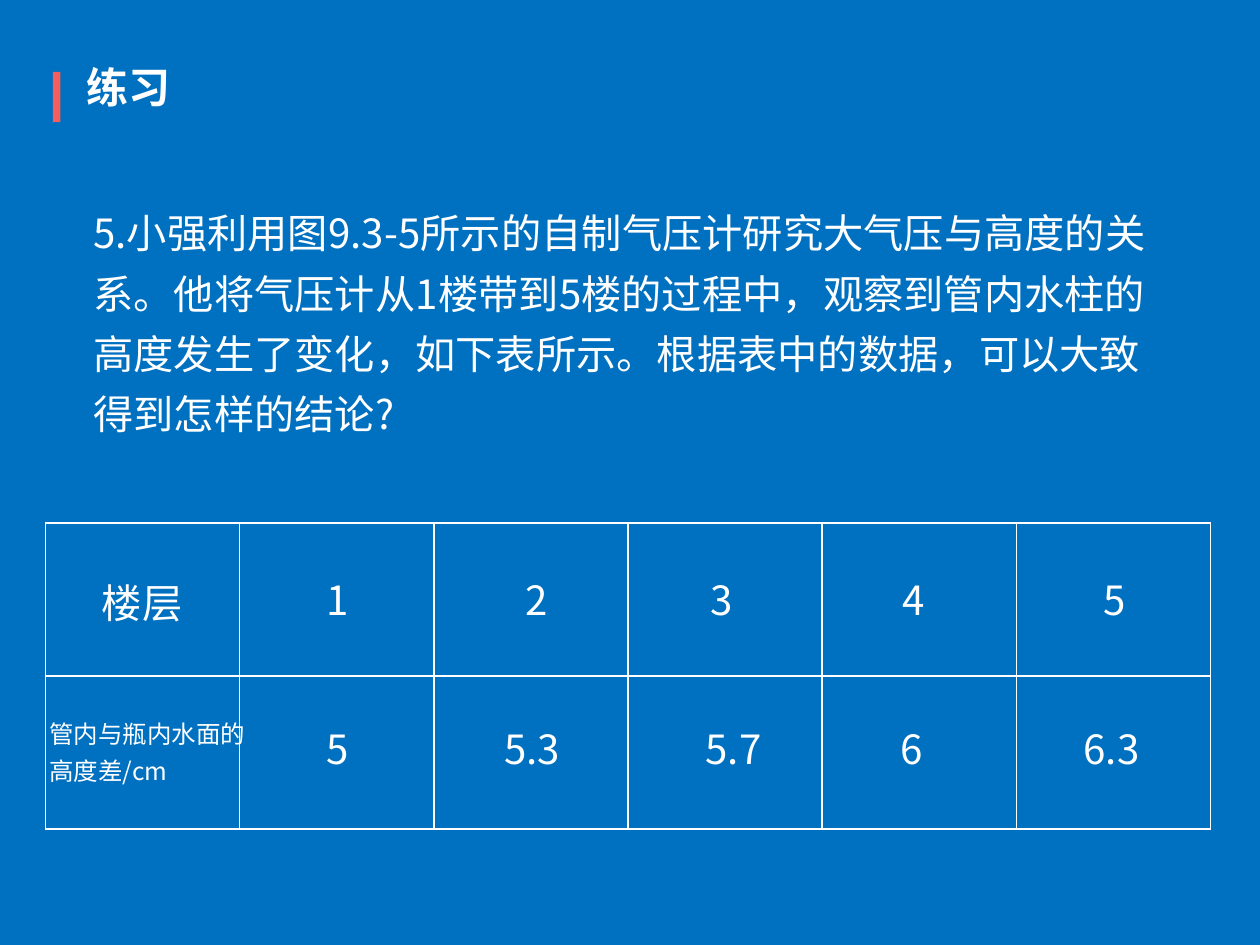
from lxml import etree
from pptx import Presentation
from pptx import util as u
from pptx.dml.color import RGBColor
from pptx.enum import shapes, text
from pptx.oxml import ns

THEME = {
    "font": "Noto Sans CJK SC",
    "background": RGBColor.from_string("0070C0"),
    "accent": RGBColor.from_string("F65D5D"),
    "ink": RGBColor.from_string("FFFFFF"),
    "title": u.Pt(24),
    "body": u.Pt(23),
    "label": u.Pt(14),
    "line": u.Pt(1),
}
FRAME = {
    "margin_left": 0, "margin_top": 0, "margin_right": 0, "margin_bottom": 0,
    "word_wrap": True, "vertical_anchor": text.MSO_ANCHOR.TOP,
    "auto_size": text.MSO_AUTO_SIZE.SHAPE_TO_FIT_TEXT,
}


def write(box, place, words, size, bold=False):
    """Place a text holder and give it one formatted paragraph."""
    for name, value in zip(("left", "top", "width", "height"), place):
        setattr(box, name, u.Inches(value))
    for name, value in FRAME.items():
        setattr(box.text_frame, name, value)
    para = box.text_frame.paragraphs[0]
    para.alignment = text.PP_ALIGN.LEFT
    para.line_spacing = 1.25
    span = para.add_run()
    span.text = words
    for name, value in {"name": THEME["font"], "size": size, "bold": bold}.items():
        setattr(span.font, name, value)
    span.font.color.rgb = THEME["ink"]
    east_asian = etree.SubElement(span.font._element, ns.qn("a:ea"))
    east_asian.set("typeface", THEME["font"])


def draw_borders(cell):
    """Outline a cell on all four sides."""
    props = cell._tc.get_or_add_tcPr()
    for index, side in enumerate(("lnL", "lnR", "lnT", "lnB")):
        line = etree.Element(ns.qn(f"a:{side}"), w=str(THEME["line"]))
        fill = etree.SubElement(line, ns.qn("a:solidFill"))
        etree.SubElement(fill, ns.qn("a:srgbClr"), val=str(THEME["ink"]))
        props.insert(index, line)


deck = Presentation()
deck.slide_width, deck.slide_height = u.Inches(10), u.Inches(7.5)
page = deck.slides.add_slide(deck.slide_layouts[5])
page.background.fill.solid()
page.background.fill.fore_color.rgb = THEME["background"]

# Heading with its accent bar
write(page.shapes.title, (0.69, 0.39, 9.3, 0.44), "练习", THEME["title"], True)
bar = page.shapes.add_shape(
    shapes.MSO_SHAPE.RECTANGLE,
    u.Inches(0.42), u.Inches(0.57), u.Inches(0.06), u.Inches(0.4))
bar.shadow.inherit = False
bar.fill.solid()
bar.fill.fore_color.rgb = THEME["accent"]
bar.line.fill.background()

# Question
question = (
    "5.小强利用图9.3-5所示的自制气压计研究大气压与高度的关系。"
    "他将气压计从1楼带到5楼的过程中，观察到管内水柱的高度发生了变化，"
    "如下表所示。根据表中的数据，可以大致得到怎样的结论?"
)
write(page.shapes.add_textbox(0, 0, 0, 0), (0.74, 1.56, 8.59, 1.94),
      question, THEME["body"])

# Table grid
grid = page.shapes.add_table(
    2, 6, u.Inches(0.36), u.Inches(4.15), u.Inches(9.25), u.Inches(2.43)).table
grid.first_row = grid.horz_banding = False
for cell in grid.iter_cells():
    cell.fill.background()
    draw_borders(cell)

# Row labels, then each row's readings as (left, value)
labels = [
    ((0.81, 4.49, 1.1, 0.42), "楼层", THEME["body"]),
    ((0.39, 5.65, 1.58, 0.55), "管内与瓶内水面的高度差/cm", THEME["label"]),
]
for place, words, size in labels:
    write(page.shapes.add_textbox(0, 0, 0, 0), place, words, size)

right_edge = 9.99
readings = {
    4.47: [(2.59, "1"), (4.17, "2"), (5.64, "3"), (7.16, "4"), (8.76, "5")],
    5.65: [(2.59, "5"), (4, "5.3"), (5.6, "5.7"), (7.15, "6"), (8.6, "6.3")],
}
for top, row in readings.items():
    for left, value in row:
        write(page.shapes.add_textbox(0, 0, 0, 0),
              (left, top, right_edge - left, 0.42), value, THEME["body"])

deck.save("out.pptx")
